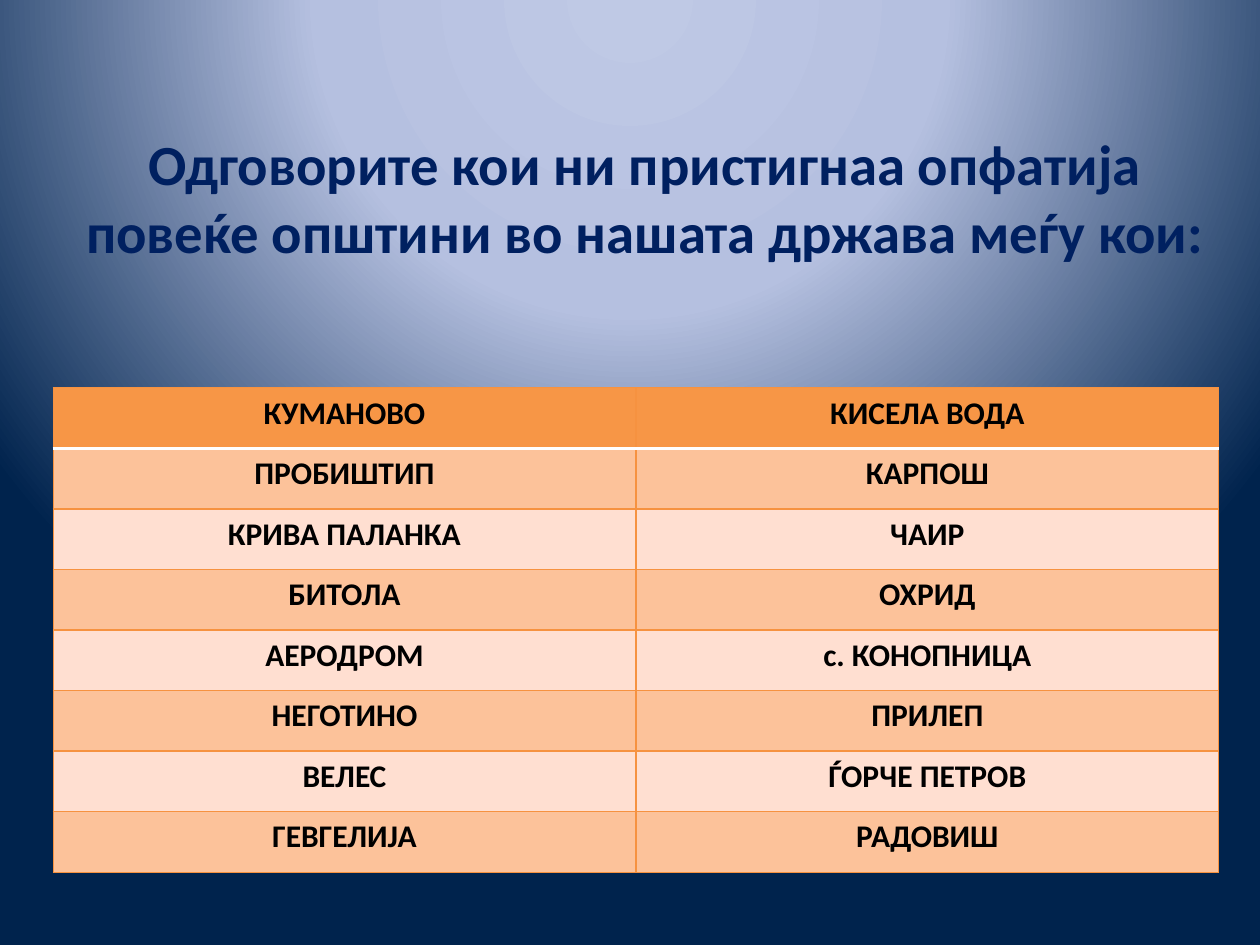
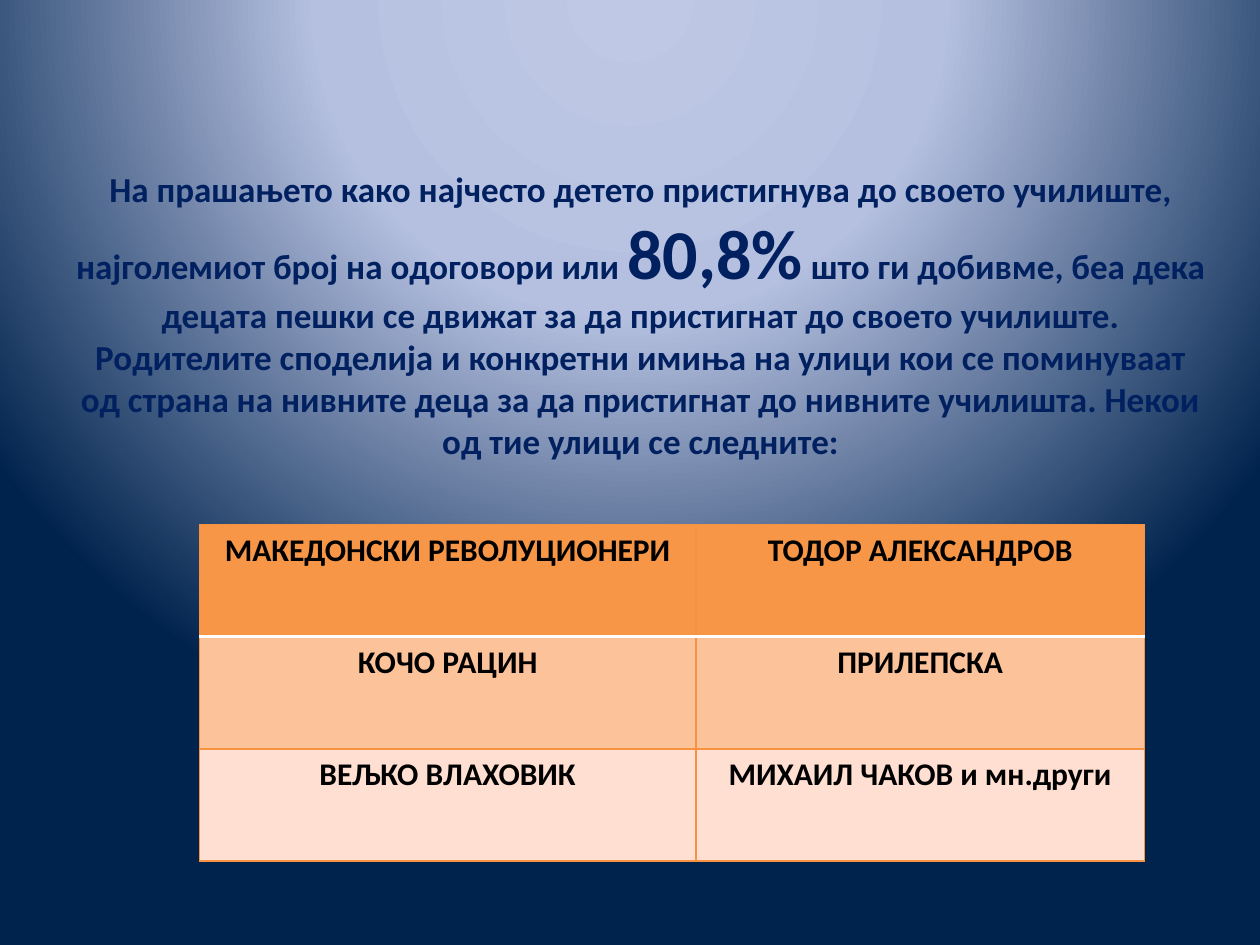
from dataclasses import dataclass

from lxml import etree
from pptx import Presentation
from pptx.dml.color import RGBColor
from pptx.enum.text import MSO_ANCHOR, MSO_AUTO_SIZE, PP_ALIGN
from pptx.oxml import parse_xml
from pptx.oxml.ns import nsdecls, qn
from pptx.util import Cm, Pt

CENTER = PP_ALIGN.CENTER
MIDDLE = MSO_ANCHOR.MIDDLE
NO_AUTOFIT = MSO_AUTO_SIZE.NONE

FONT = "Calibri"
NAVY = RGBColor(0x00, 0x20, 0x60)
BLACK = RGBColor(0x00, 0x00, 0x00)
WHITE = RGBColor(0xFF, 0xFF, 0xFF)
ORANGE = RGBColor(0xF7, 0x96, 0x46)
ORANGE_LINE = RGBColor(0xF6, 0x92, 0x40)
BAND_DARK = RGBColor(0xFC, 0xC2, 0x9A)
BAND_LIGHT = RGBColor(0xFF, 0xDF, 0xD1)
GLOW = [
    (0, RGBColor(0xBF, 0xC9, 0xE5)),
    (40, RGBColor(0xB5, 0xC0, 0xE0)),
    (100, RGBColor(0x00, 0x23, 0x4D)),
]
TITLE_ONLY = 5


@dataclass(frozen=True)
class Title:
    """Box in cm, bottom inset in cm, and (text, point size) runs."""
    box: tuple[float, float, float, float]
    bottom_inset: float
    runs: list[tuple[str, float]]


@dataclass(frozen=True)
class Grid:
    """Table corner, column widths and row height in cm, with its rows."""
    left: float
    top: float
    columns: tuple[float, ...]
    row_height: float
    rows: list[tuple[str, ...]]


SLIDES = [
    (
        Title((1.47, 2.97, 23.06, 3.38), 1.52, [
            ("Одговорите кои ни пристигнаа опфатија повеќе општини "
             "во нашата држава меѓу кои:", 32.4),
        ]),
        Grid(1.07, 7.82, (11.75, 11.75), 1.22, [
            ("КУМАНОВО", "КИСЕЛА ВОДА"),
            ("ПРОБИШТИП", "КАРПОШ"),
            ("КРИВА ПАЛАНКА", "ЧАИР"),
            ("БИТОЛА", "ОХРИД"),
            ("АЕРОДРОМ", "с. КОНОПНИЦА"),
            ("НЕГОТИНО", "ПРИЛЕП"),
            ("ВЕЛЕС", "ЃОРЧЕ ПЕТРОВ"),
            ("ГЕВГЕЛИЈА", "РАДОВИШ"),
        ]),
    ),
    (
        Title((1.27, 3.81, 23.29, 5.92), 0.99, [
            ("На прашањето како најчесто детето пристигнува до своето училиште, "
             "најголемиот број на одоговори или ", 20),
            ("80,8%", 40),
            (" што ги добивме, беа дека децата пешки се движат за да пристигнат "
             "до своето училиште. Родителите споделија и конкретни имиња на улици "
             "кои се поминуваат од страна на нивните деца за да пристигнат до "
             "нивните училишта. Некои од тие улици се следните:", 20),
        ]),
        Grid(4.02, 10.58, (10.01, 9.04), 2.26, [
            ("МАКЕДОНСКИ РЕВОЛУЦИОНЕРИ", "ТОДОР АЛЕКСАНДРОВ"),
            ("КОЧО РАЦИН", "ПРИЛЕПСКА"),
            ("ВЕЉКО ВЛАХОВИК", "МИХАИЛ ЧАКОВ и мн.други"),
        ]),
    ),
]


def add_run(p, text: str, *, size: float, color: RGBColor, bold: bool = True) -> None:
    p.alignment = CENTER
    r = p.add_run()
    r.text = text
    r.font.name = FONT
    r.font.size = Pt(size)
    r.font.bold = bold
    r.font.color.rgb = color


def set_glow_background(master) -> None:
    """Give every slide the radial glow that starts above the top edge."""
    master.background.fill.solid()
    bg = master.element.find(".//" + qn("p:bgPr"))
    stops = "".join(
        f'<a:gs pos="{pos * 1000}"><a:srgbClr val="{color}"/></a:gs>'
        for pos, color in GLOW
    )
    glow = parse_xml(
        f'<a:gradFill {nsdecls("a")} rotWithShape="1"><a:gsLst>{stops}</a:gsLst>'
        '<a:path path="circle"><a:fillToRect l="50000" t="-80000" r="50000" '
        'b="180000"/></a:path></a:gradFill>'
    )
    bg.replace(bg.find(qn("a:solidFill")), glow)


def set_border(cell, side: str, color: RGBColor, width: float) -> None:
    ln = etree.SubElement(cell._tc.get_or_add_tcPr(), qn(f"a:ln{side}"), w=str(Pt(width)))
    fill = etree.SubElement(ln, qn("a:solidFill"))
    etree.SubElement(fill, qn("a:srgbClr"), val=str(color))


def fill_title(sp, title: Title) -> None:
    sp.left, sp.top, sp.width, sp.height = map(Cm, title.box)
    tf = sp.text_frame
    tf.word_wrap = True
    tf.auto_size = NO_AUTOFIT
    tf.vertical_anchor = MIDDLE
    tf.margin_bottom = Cm(title.bottom_inset)
    for text, size in title.runs:
        add_run(tf.paragraphs[0], text, size=size, color=NAVY)


def format_cell(cell, text: str, row: int) -> None:
    # The white rule lies between the header (row 0) and row 1.
    white_side = {0: "B", 1: "T"}.get(row)
    for side in "LRTB":
        if side == white_side:
            set_border(cell, side, WHITE, 2)
        else:
            set_border(cell, side, ORANGE_LINE, 0.75)
    cell.fill.solid()
    band = BAND_DARK if row % 2 else BAND_LIGHT
    cell.fill.fore_color.rgb = band if row else ORANGE
    add_run(cell.text_frame.paragraphs[0], text, size=18, color=BLACK)


def add_grid(s, grid: Grid) -> None:
    table = s.shapes.add_table(
        len(grid.rows), len(grid.columns), Cm(grid.left), Cm(grid.top),
        Cm(sum(grid.columns)), Cm(grid.row_height * len(grid.rows)),
    ).table
    for column, width in zip(table.columns, grid.columns):
        column.width = Cm(width)
    for i, texts in enumerate(grid.rows):
        table.rows[i].height = Cm(grid.row_height)
        for j, text in enumerate(texts):
            format_cell(table.cell(i, j), text, i)


def main() -> None:
    prs = Presentation()
    prs.slide_width, prs.slide_height = Cm(25.4), Cm(19.05)
    set_glow_background(prs.slide_master)
    for title, grid in SLIDES:
        s = prs.slides.add_slide(prs.slide_layouts[TITLE_ONLY])
        fill_title(s.shapes.title, title)
        add_grid(s, grid)
    prs.save("out.pptx")


if __name__ == "__main__":
    main()
